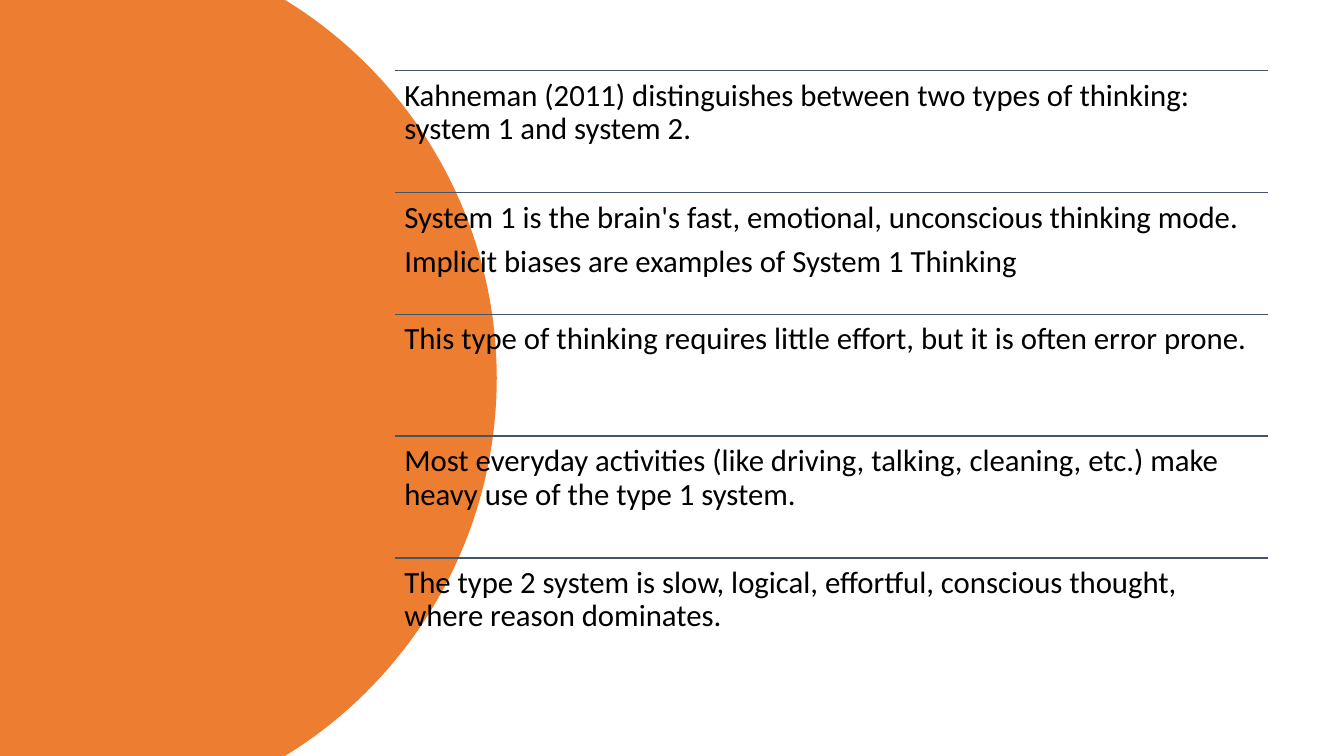
from math import asin, cos, sin

from lxml.etree import SubElement
from pptx import Presentation
from pptx.dml.color import RGBColor
from pptx.enum.shapes import MSO_CONNECTOR as Connector
from pptx.oxml.ns import qn
from pptx.util import Cm, Pt

ORANGE = RGBColor(0xED, 0x7D, 0x31)
SLATE = RGBColor(0x44, 0x54, 0x6A)
BLACK = RGBColor(0, 0, 0)

PAGE_WIDTH, PAGE_HEIGHT = Cm(33.87), Cm(19.05)
ROW_LEFT, ROW_TOP = Cm(9.96), Cm(1.78)
ROW_WIDTH, ROW_HEIGHT = Cm(22), Cm(3.07)
ARC_EDGE, ARC_RADIUS = Cm(12.52), Cm(11.17)
ARC_STEPS = 80

STATEMENTS = [
    ["Kahneman (2011) distinguishes between two types of thinking: "
     "system 1 and system 2."],
    ["System 1 is the brain's fast, emotional, unconscious thinking mode.",
     "Implicit biases are examples of System 1 Thinking"],
    ["This type of thinking requires little effort, but it is often error prone."],
    ["Most everyday activities (like driving, talking, cleaning, etc.) make "
     "heavy use of the type 1 system."],
    ["The type 2 system is slow, logical, effortful, conscious thought, "
     "where reason dominates."],
]


def add_arc_panel(page):
    middle = PAGE_HEIGHT / 2
    centre = ARC_EDGE - ARC_RADIUS
    half_angle = asin(middle / ARC_RADIUS)
    angles = [half_angle * (2 * step / ARC_STEPS - 1) for step in range(ARC_STEPS + 1)]
    arc = [(round(centre + ARC_RADIUS * cos(angle)),
            round(middle + ARC_RADIUS * sin(angle))) for angle in angles]
    builder = page.shapes.build_freeform(0, 0)
    builder.add_line_segments(arc + [(0, PAGE_HEIGHT)], close=True)
    panel = builder.convert_to_shape()
    panel.shadow.inherit = False
    panel.fill.solid()
    panel.fill.fore_color.rgb = ORANGE
    panel.line.fill.background()


def add_rule(page, top):
    rule = page.shapes.add_connector(
        Connector.STRAIGHT, ROW_LEFT, top, ROW_LEFT + ROW_WIDTH, top)
    rule.line.color.rgb = SLATE
    rule.line.width = Pt(1)
    SubElement(rule._element.spPr, qn("a:effectLst"))


def add_statement(page, top, lines):
    box = page.shapes.add_textbox(ROW_LEFT, top, ROW_WIDTH, ROW_HEIGHT)
    frame = box.text_frame
    frame.word_wrap = True
    frame.margin_left = frame.margin_right = Cm(0.23)
    frame.margin_top = frame.margin_bottom = Cm(0.23)
    frame.text = "\n".join(lines)
    for para in frame.paragraphs:
        para.line_spacing = 0.9
        para.space_after = Pt(7.7)
        para.font.name = "Calibri"
        para.font.size = Pt(22)
        para.font.color.rgb = BLACK


def main():
    deck = Presentation()
    deck.slide_width, deck.slide_height = PAGE_WIDTH, PAGE_HEIGHT
    page = deck.slides.add_slide(deck.slide_layouts[6])
    add_arc_panel(page)
    for row, lines in enumerate(STATEMENTS):
        top = ROW_TOP + row * ROW_HEIGHT
        add_rule(page, top)
        add_statement(page, top, lines)
    deck.save("out.pptx")


if __name__ == "__main__":
    main()
